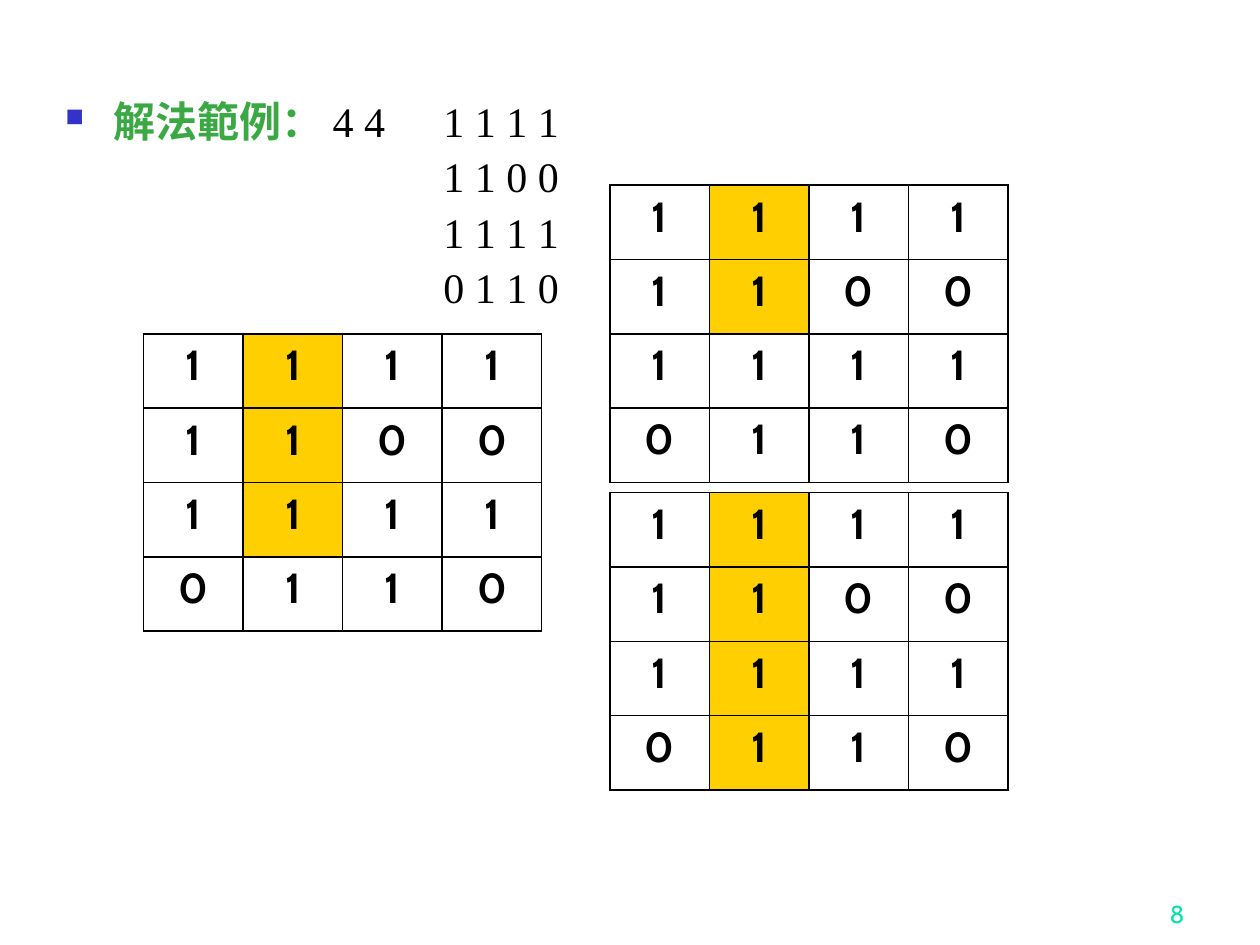
from dataclasses import dataclass
from typing import Any

from lxml import etree
from pptx import Presentation, util as u
from pptx.dml.color import RGBColor
from pptx.enum import text
from pptx.oxml import ns

WHITE = RGBColor(0xFF, 0xFF, 0xFF)
BLACK = RGBColor(0x00, 0x00, 0x00)
GREEN = RGBColor(0x3B, 0xA9, 0x43)
BLUE = RGBColor(0x33, 0x33, 0xCC)
MINT = RGBColor(0x00, 0xE4, 0xA8)
GOLD = RGBColor(0xFF, 0xCF, 0x01)

MATRIX = ["1111", "1100", "1111", "0110"]
MARKED_COLUMN = 1
# Left, top and number of marked rows of each step
STEPS = [(4.84, 1.47, 2), (1.14, 2.65, 3), (4.84, 3.91, 4)]


def add_xml(parent, tag, **attributes):
    return etree.SubElement(parent, ns.qn(tag), attributes)


@dataclass
class Deck:
    """The current slide and its style; lengths are inches."""
    slide: Any
    body_font: str = "Times New Roman"
    digit_font: str = "Cabin"
    size: int = 24
    cell_width: float = 0.79
    cell_height: float = 0.59
    matrix_indent: float = 3.0

    def style(self, font, name, color, size=None, bold=False):
        font.name, font.size, font.bold = name, u.Pt(size or self.size), bold
        font.color.rgb = color

    def text_frame(self, left, top, width, height):
        box = self.slide.shapes.add_textbox(*map(u.Inches, (left, top, width, height)))
        box.text_frame.word_wrap = True
        return box.text_frame

    def bullet(self, paragraph):
        props = paragraph._p.get_or_add_pPr()
        props.set("marL", str(u.Inches(0.38)))
        props.set("indent", str(u.Inches(-0.38)))
        add_xml(add_xml(props, "a:buClr"), "a:srgbClr", val=str(BLUE))
        add_xml(props, "a:buSzPct", val="60000")
        add_xml(props, "a:buChar", char="■")

    def example(self, label, dimensions, rows):
        """Bulleted label and size, with the matrix rows aligned on one column."""
        frame = self.text_frame(0.42, 0.75, 8.83, 6.15)
        for index, row in enumerate(rows):
            paragraph = frame.paragraphs[0] if index == 0 else frame.add_paragraph()
            paragraph.line_spacing = 0.9
            paragraph.space_before = u.Pt(5.8)
            digits = " ".join(row)
            if index == 0:
                self.bullet(paragraph)
                heading = paragraph.add_run()
                heading.text = label
                self.style(heading.font, self.body_font, GREEN, bold=True)
                digits = f"{dimensions} \t{digits}"
            else:
                paragraph._p.get_or_add_pPr().set("marL", str(u.Inches(self.matrix_indent)))
            values = paragraph.add_run()
            values.text = digits
            self.style(values.font, self.body_font, BLACK)

    def border(self, cell):
        props = cell._tc.get_or_add_tcPr()
        for position, side in enumerate(("a:lnL", "a:lnR", "a:lnT", "a:lnB")):
            line = etree.Element(ns.qn(side), w=str(u.Pt(1)))
            add_xml(add_xml(line, "a:solidFill"), "a:srgbClr", val=str(BLACK))
            props.insert(position, line)

    def matrix(self, left, top, rows, marked_rows):
        count = len(rows)
        table = self.slide.shapes.add_table(
            count, count, u.Inches(left), u.Inches(top),
            u.Inches(count * self.cell_width), u.Inches(count * self.cell_height)).table
        for r, row in enumerate(rows):
            for c, digit in enumerate(row):
                cell = table.cell(r, c)
                cell.text = digit
                marked = c == MARKED_COLUMN and r < marked_rows
                cell.fill.solid()
                cell.fill.fore_color.rgb = GOLD if marked else WHITE
                paragraph = cell.text_frame.paragraphs[0]
                paragraph.alignment = text.PP_ALIGN.CENTER
                self.style(paragraph.font, self.digit_font, BLACK, bold=True)
                self.border(cell)

    def page_number(self, number):
        frame = self.text_frame(7.42, 6.92, 2.08, 0.5)
        frame.vertical_anchor = text.MSO_ANCHOR.BOTTOM
        paragraph = frame.paragraphs[0]
        paragraph.text = number
        paragraph.alignment = text.PP_ALIGN.RIGHT
        self.style(paragraph.font, self.digit_font, MINT, size=14)


def main():
    presentation = Presentation()
    presentation.slide_width, presentation.slide_height = u.Inches(10), u.Inches(7.5)
    deck = Deck(presentation.slides.add_slide(presentation.slide_layouts[6]))
    deck.page_number("8")
    deck.example("解法範例： ", "4 4", MATRIX)
    for left, top, marked_rows in STEPS:
        deck.matrix(left, top, MATRIX, marked_rows)
    presentation.save("out.pptx")


if __name__ == "__main__":
    main()
